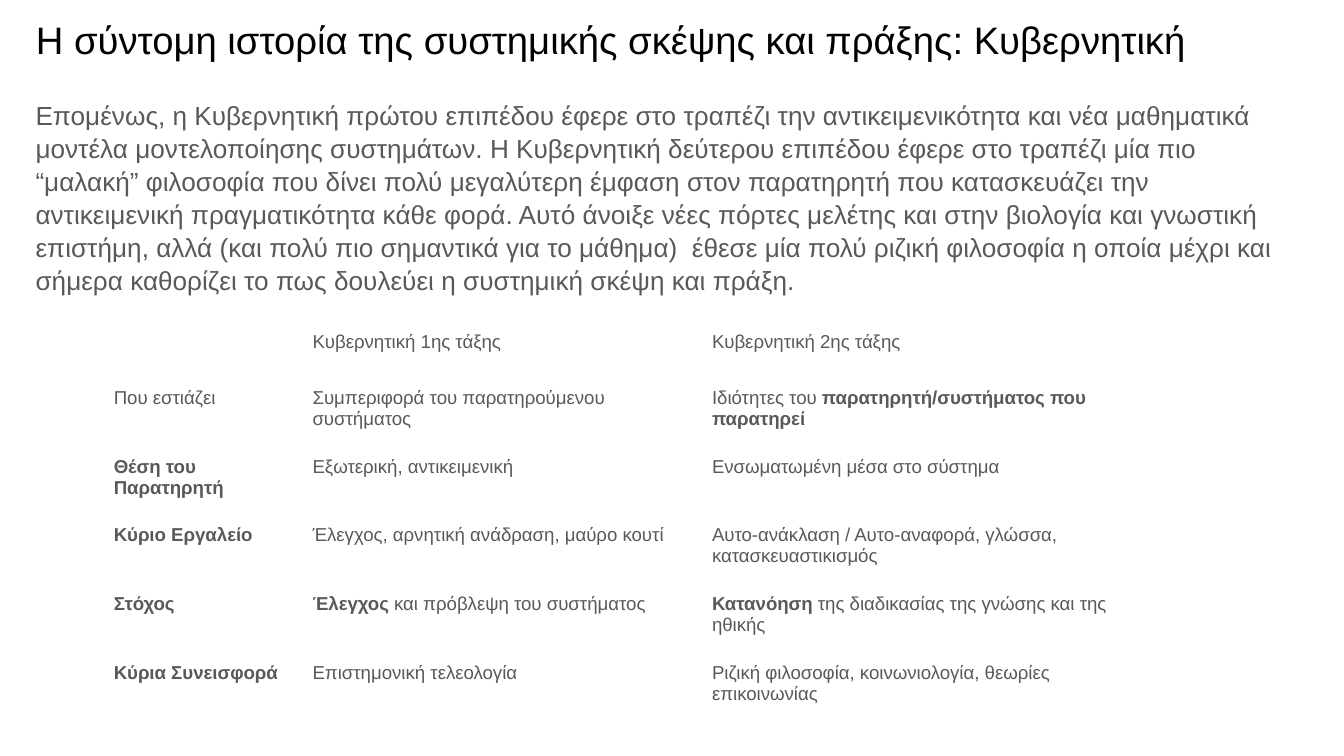
from dataclasses import dataclass

from lxml import etree
from pptx import Presentation
from pptx.dml.color import RGBColor
from pptx.enum.text import MSO_ANCHOR, MSO_AUTO_SIZE, PP_ALIGN
from pptx.oxml.ns import qn
from pptx.util import Pt

TOP, MIDDLE = MSO_ANCHOR.TOP, MSO_ANCHOR.MIDDLE
NO_AUTOFIT = MSO_AUTO_SIZE.NONE
LEFT = PP_ALIGN.LEFT
TITLE_ONLY = 5


@dataclass(frozen=True)
class Theme:
    font: str = "Arial"
    title_color: str = "000000"
    text_color: str = "595959"
    border_color: str = "FFFFFF"
    title_size: float = 20.5
    body_size: float = 14
    table_size: float = 10
    border_width: float = 0.75
    inset: float = 7.2


THEME = Theme()

TITLE = "Η σύντομη ιστορία της συστημικής σκέψης και πράξης: Κυβερνητική"
SUMMARY = (
    "Επομένως, η Κυβερνητική πρώτου επιπέδου έφερε στο τραπέζι την "
    "αντικειμενικότητα και νέα μαθηματικά μοντέλα μοντελοποίησης συστημάτων. "
    "Η Κυβερνητική δεύτερου επιπέδου έφερε στο τραπέζι μία πιο “μαλακή” "
    "φιλοσοφία που δίνει πολύ μεγαλύτερη έμφαση στον παρατηρητή που "
    "κατασκευάζει την αντικειμενική πραγματικότητα κάθε φορά. Αυτό άνοιξε νέες "
    "πόρτες μελέτης και στην βιολογία και γνωστική επιστήμη, αλλά (και πολύ πιο "
    "σημαντικά για το μάθημα)  έθεσε μία πολύ ριζική φιλοσοφία η οποία μέχρι "
    "και σήμερα καθορίζει το πως δουλεύει η συστημική σκέψη και πράξη."
)
# Text between ** marks is bold
COMPARISON = [
    ["", "Κυβερνητική 1ης τάξης", "Κυβερνητική 2ης τάξης"],
    ["Που εστιάζει", "Συμπεριφορά του παρατηρούμενου συστήματος",
     "Ιδιότητες του **παρατηρητή/συστήματος που παρατηρεί**"],
    ["**Θέση του Παρατηρητή**", "Εξωτερική, αντικειμενική",
     "Ενσωματωμένη μέσα στο σύστημα"],
    ["**Κύριο Εργαλείο**", "Έλεγχος, αρνητική ανάδραση, μαύρο κουτί",
     "Αυτο-ανάκλαση / Αυτο-αναφορά, γλώσσα, κατασκευαστικισμός"],
    ["**Στόχος**", "**Έλεγχος** και πρόβλεψη του συστήματος",
     "**Κατανόηση** της διαδικασίας της γνώσης και της ηθικής"],
    ["**Κύρια Συνεισφορά**", "Επιστημονική τελεολογία",
     "Ριζική φιλοσοφία, κοινωνιολογία, θεωρίες επικοινωνίας"],
]
COLUMN_WIDTHS = [106.5, 214, 249.75]
ROW_HEIGHT = 30


def set_all(target, values):
    for name, value in values.items():
        setattr(target, name, value)


def insets():
    return {f"margin_{side}": Pt(THEME.inset)
            for side in ("left", "top", "right", "bottom")}


def write(paragraph, text, size, color):
    """Write text whose ** marks switch bold on and off."""
    paragraph.alignment = LEFT
    for index, part in enumerate(text.split("**")):
        if part:
            font = paragraph.add_run().text, part
            run = paragraph.runs[-1]
            run.text = part
            set_all(run.font, {"name": THEME.font, "size": Pt(size),
                               "bold": index % 2 == 1})
            run.font.color.rgb = RGBColor.from_string(color)


def place_text(shape, box, text, size, color, anchor, spacing):
    set_all(shape, dict(zip(("left", "top", "width", "height"), map(Pt, box))))
    frame = shape.text_frame
    set_all(frame, {"word_wrap": True, "auto_size": NO_AUTOFIT,
                    "vertical_anchor": anchor, **insets()})
    paragraph = frame.paragraphs[0]
    set_all(paragraph, {"line_spacing": spacing, "space_before": Pt(0)})
    write(paragraph, text, size, color)


def add_title(slide, box):
    place_text(slide.shapes.title, box, TITLE, THEME.title_size,
               THEME.title_color, MIDDLE, 0.9)


def add_summary(slide, box):
    summary = slide.shapes.add_textbox(*map(Pt, box))
    place_text(summary, box, SUMMARY, THEME.body_size, THEME.text_color, TOP, 1.05)


def add_borders(cell):
    properties = cell._tc.get_or_add_tcPr()
    for position, side in enumerate(("lnL", "lnR", "lnT", "lnB")):
        line = etree.Element(qn(f"a:{side}"), w=str(Pt(THEME.border_width)))
        fill = etree.SubElement(line, qn("a:solidFill"))
        etree.SubElement(fill, qn("a:srgbClr"), val=THEME.border_color)
        properties.insert(position, line)


def add_comparison(slide, box):
    table = slide.shapes.add_table(
        len(COMPARISON), len(COLUMN_WIDTHS), *map(Pt, box)).table
    set_all(table, {"first_row": False, "horz_banding": False})
    for column, width in zip(table.columns, COLUMN_WIDTHS):
        column.width = Pt(width)
    for row, texts in zip(table.rows, COMPARISON):
        row.height = Pt(ROW_HEIGHT)
        for cell, text in zip(row.cells, texts):
            set_all(cell, {"vertical_anchor": TOP, **insets()})
            cell.fill.background()
            add_borders(cell)
            paragraph = cell.text_frame.paragraphs[0]
            write(paragraph, text, THEME.table_size, THEME.text_color)
            # Keeps the empty corner cell from stretching its row
            etree.SubElement(paragraph._p, qn("a:endParaRPr"),
                             sz=str(int(THEME.table_size * 100)))


def main():
    presentation = Presentation()
    set_all(presentation, {"slide_width": Pt(720), "slide_height": Pt(405)})
    slide = presentation.slides.add_slide(presentation.slide_layouts[TITLE_ONLY])
    add_title(slide, (12, 0, 692, 45.4))
    add_summary(slide, (12, 45.4, 692, 150.5))
    add_comparison(slide, (53.75, 170.6, sum(COLUMN_WIDTHS),
                           ROW_HEIGHT * len(COMPARISON)))
    presentation.save("out.pptx")


if __name__ == "__main__":
    main()
